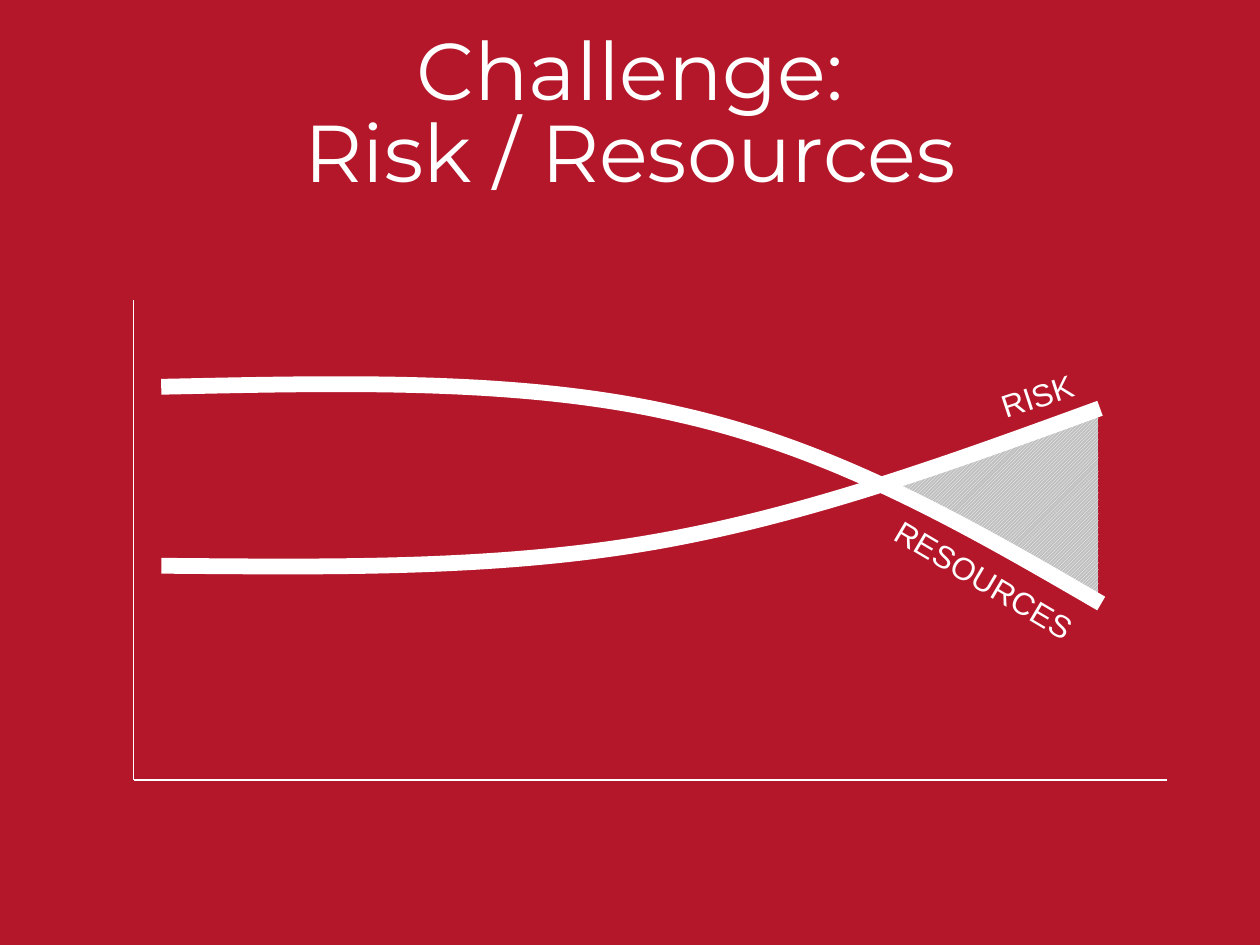
from dataclasses import dataclass
from math import cos, radians, sin

from lxml.etree import SubElement
from pptx import Presentation
from pptx.dml.color import RGBColor
from pptx.enum.dml import MSO_PATTERN
from pptx.enum.shapes import MSO_CONNECTOR
from pptx.enum.text import MSO_ANCHOR, PP_ALIGN
from pptx.oxml.ns import qn
from pptx.util import Inches, Pt


@dataclass(frozen=True)
class Theme:
    red: RGBColor = RGBColor(0xB5, 0x17, 0x2A)
    white: RGBColor = RGBColor(0xFF, 0xFF, 0xFF)
    grey: RGBColor = RGBColor(0xC0, 0xC0, 0xC0)
    title_font: str = "Montserrat"
    label_font: str = "Arial"
    title_size: Pt = Pt(46)
    label_size: Pt = Pt(18)
    axis_width: Pt = Pt(0.75)
    curve_width: Pt = Pt(9)


THEME = Theme()


def add_text(slide, text, box, font_name, size):
    text_box = slide.shapes.add_textbox(*map(Inches, box))
    text_box.text_frame.text = text
    text_box.text_frame.word_wrap = True
    for run in text_box.text_frame.paragraphs[0].runs:
        run.font.name = font_name
        run.font.size = size
        run.font.color.rgb = THEME.white
    return text_box


def add_title(slide, text):
    title = add_text(slide, text, (0.5, 0.3, 9, 1.25),
                     THEME.title_font, THEME.title_size)
    title.text_frame.vertical_anchor = MSO_ANCHOR.MIDDLE
    paragraph = title.text_frame.paragraphs[0]
    paragraph.alignment = PP_ALIGN.CENTER
    paragraph.line_spacing = 0.85


def add_curve_label(slide, text, box, rotation):
    label = add_text(slide, text, box, THEME.label_font, THEME.label_size)
    label.text_frame.margin_right = 0  # keeps the word on one line
    label.rotation = rotation


def add_axis(slide, start, end):
    axis = slide.shapes.add_connector(
        MSO_CONNECTOR.STRAIGHT, *map(Inches, start + end))
    axis.line.color.rgb = THEME.white
    axis.line.width = THEME.axis_width
    SubElement(axis.element.spPr, qn("a:effectLst"))


def add_outline(slide, points, close):
    start, *rest = [(Inches(x), Inches(y)) for x, y in points]
    builder = slide.shapes.build_freeform(*start)
    builder.add_line_segments(rest, close=close)
    outline = builder.convert_to_shape()
    outline.shadow.inherit = False
    return outline


def turn_back(points, rotation):
    """Undo a rotation about the midpoint between the first and last point."""
    (x0, y0), (x1, y1) = points[0], points[-1]
    mid_x, mid_y = (x0 + x1) / 2, (y0 + y1) / 2
    c, s = cos(radians(rotation)), sin(radians(rotation))
    return [(mid_x + (x - mid_x) * c + (y - mid_y) * s,
             mid_y - (x - mid_x) * s + (y - mid_y) * c) for x, y in points]


def add_curve(slide, controls, rotation):
    """Draw cubic Beziers: a start, then three points per segment."""
    curve = add_outline(slide, turn_back(controls, rotation), close=False)
    # Merge each three straight steps into one cubic segment
    steps = list(curve.element.iter(qn("a:lnTo")))
    for first in range(0, len(steps), 3):
        segment, *others = steps[first:first + 3]
        segment.tag = qn("a:cubicBezTo")
        for step in others:
            segment.append(step[0])
            step.getparent().remove(step)
    curve.rotation = rotation
    curve.fill.background()
    curve.line.color.rgb = THEME.white
    curve.line.width = THEME.curve_width


def add_gap(slide, corners):
    gap = add_outline(slide, corners, close=True)
    gap.fill.patterned()
    gap.fill.pattern = MSO_PATTERN.DARK_UPWARD_DIAGONAL
    gap.fill.fore_color.rgb = THEME.white
    gap.fill.back_color.rgb = THEME.grey
    gap.line.fill.background()


def main():
    deck = Presentation()
    deck.slide_width, deck.slide_height = Inches(10), Inches(7.5)
    slide = deck.slides.add_slide(deck.slide_layouts[6])
    slide.background.fill.solid()
    slide.background.fill.fore_color.rgb = THEME.red

    add_title(slide, "Challenge:\vRisk / Resources")

    # Gap between risk and resources, behind the curves
    add_gap(slide, [(7.07, 3.82), (8.72, 3.24), (8.72, 4.8), (7.02, 3.85)])

    # Axes meeting at the origin
    origin = (1.06, 6.19)
    add_axis(slide, (1.06, 2.38), origin)
    add_axis(slide, origin, (9.26, 6.19))

    # Risk rises while resources fall
    add_curve(slide, [(8.73, 3.24), (7.55, 3.67), (6.38, 4.1), (5.14, 4.31),
                      (3.9, 4.52), (2.59, 4.5), (1.28, 4.49)], 188.5)
    add_curve(slide, [(1.28, 3.07), (2.71, 3.04), (4.15, 3), (5.39, 3.29),
                      (6.64, 3.57), (7.69, 4.18), (8.74, 4.79)], 45)

    # Labels along the curves
    add_curve_label(slide, "RISK", (7.84, 2.94, 0.78, 0.4), 341.8)
    add_curve_label(slide, "RESOURCES", (6.92, 4.4, 1.78, 0.4), 30.7)

    deck.save("out.pptx")


if __name__ == "__main__":
    main()
